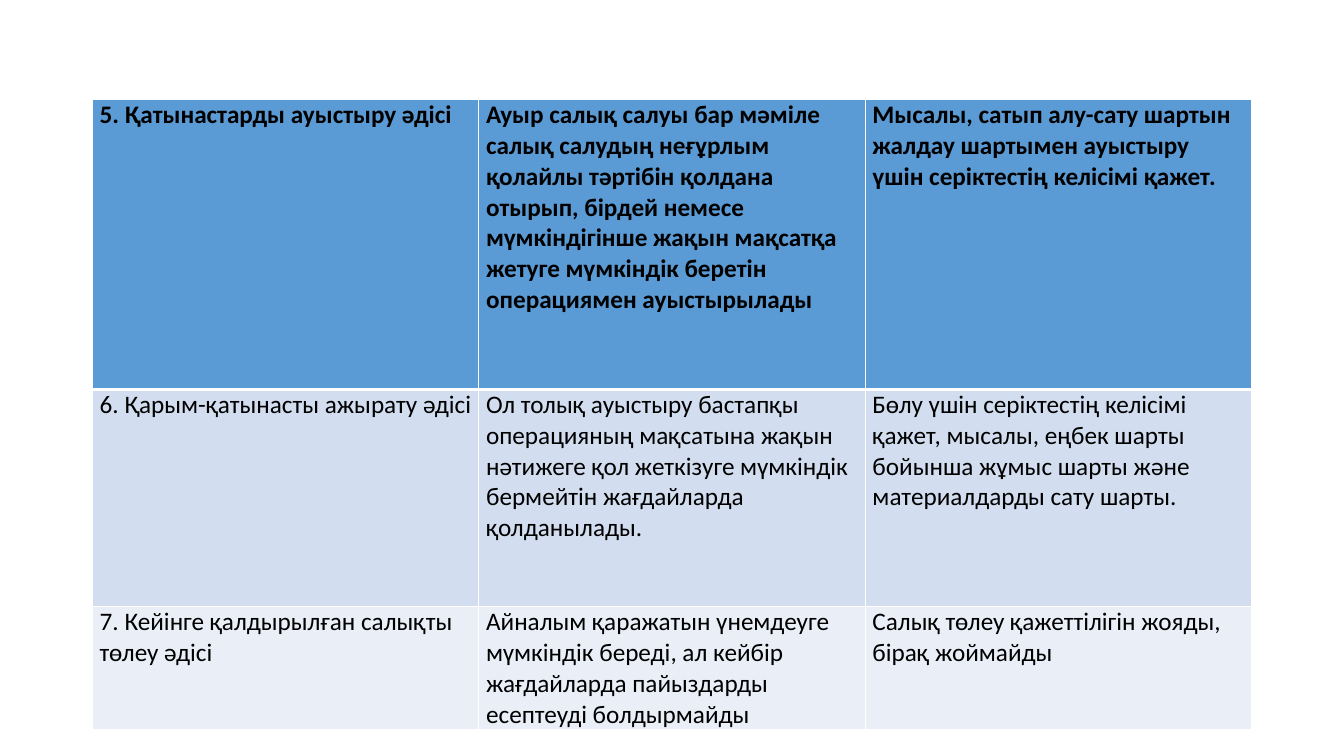
from pptx import Presentation
from pptx.dml.color import RGBColor
from pptx.oxml import parse_xml
from pptx.oxml.ns import nsdecls
from pptx.util import Emu, Pt

PX = 9525
THEME = {
    "font": "Calibri",
    "size": 18,
    "text": "000000",
    "border": "FFFFFF",
    "rows": ["5B9BD5", "D2DEEF", "EAEFF7"],
    "thin": 1,
    "thick": 3,
}


def px(length):
    return Emu(length * PX)


def add_border(cell, side, points):
    cell._tc.get_or_add_tcPr().append(parse_xml(
        f'<a:{side} {nsdecls("a")} w="{Pt(points)}"><a:solidFill>'
        f'<a:srgbClr val="{THEME["border"]}"/></a:solidFill></a:{side}>'))


methods = [
    ["5. Қатынастарды ауыстыру әдісі",
     "Ауыр салық салуы бар мәміле салық салудың неғұрлым қолайлы тәртібін қолдана отырып, "
     "бірдей немесе мүмкіндігінше жақын мақсатқа жетуге мүмкіндік беретін операциямен ауыстырылады",
     "Мысалы, сатып алу-сату шартын жалдау шартымен ауыстыру үшін серіктестің келісімі қажет."],
    ["6. Қарым-қатынасты ажырату әдісі",
     "Ол толық ауыстыру бастапқы операцияның мақсатына жақын нәтижеге қол жеткізуге "
     "мүмкіндік бермейтін жағдайларда қолданылады.",
     "Бөлу үшін серіктестің келісімі қажет, мысалы, еңбек шарты бойынша жұмыс шарты "
     "және материалдарды сату шарты."],
    ["7. Кейінге қалдырылған салықты төлеу әдісі",
     "Айналым қаражатын үнемдеуге мүмкіндік береді, ал кейбір жағдайларда "
     "пайыздарды есептеуді болдырмайды",
     "Салық төлеу қажеттілігін жояды, бірақ жоймайды"],
]
row_heights = [276, 207, 104]
column_width = 368

prs = Presentation()
prs.slide_width, prs.slide_height = px(1280), px(720)
slide = prs.slides.add_slide(prs.slide_layouts[6])

tax_methods = slide.shapes.add_table(
    len(methods), 3, px(88), px(95), px(3 * column_width), px(sum(row_heights))).table
for column in tax_methods.columns:
    column.width = px(column_width)

for r, (method, height, fill) in enumerate(zip(methods, row_heights, THEME["rows"])):
    tax_methods.rows[r].height = px(height)
    top = THEME["thick"] if r == 1 else THEME["thin"]
    bottom = THEME["thick"] if r == 0 else THEME["thin"]
    for c, wording in enumerate(method):
        cell = tax_methods.cell(r, c)
        cell.margin_left = cell.margin_right = px(7)
        cell.margin_top = cell.margin_bottom = 0
        for side, points in [("lnL", THEME["thin"]), ("lnR", THEME["thin"]),
                             ("lnT", top), ("lnB", bottom)]:
            add_border(cell, side, points)
        cell.fill.solid()
        cell.fill.fore_color.rgb = RGBColor.from_string(fill)
        cell.text_frame.text = wording
        font = cell.text_frame.paragraphs[0].runs[0].font
        font.name = THEME["font"]
        font.size = Pt(THEME["size"])
        font.bold = r == 0
        font.color.rgb = RGBColor.from_string(THEME["text"])

prs.save("out.pptx")
